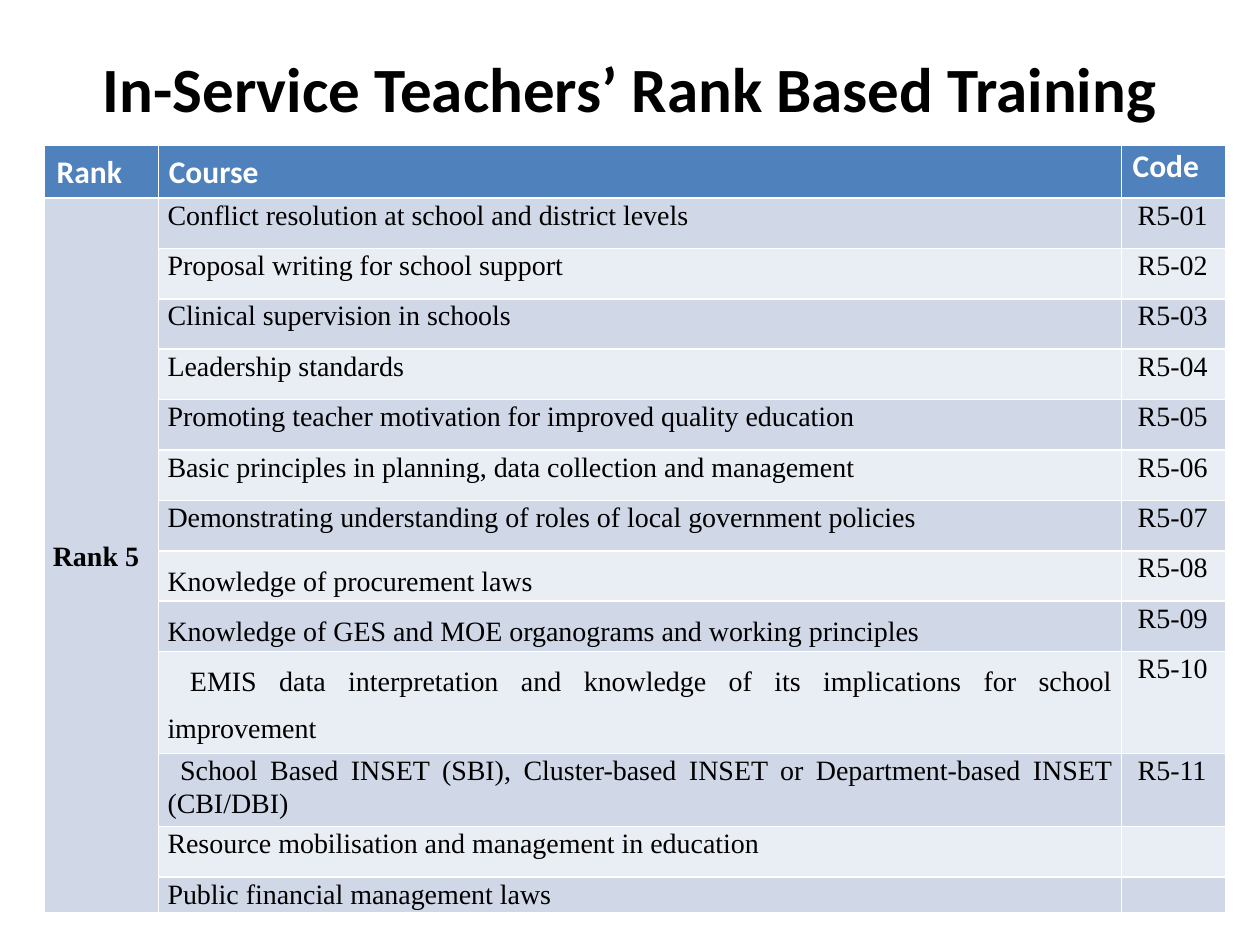
from pptx import Presentation
from pptx import util as u
from pptx.dml.color import RGBColor
from pptx.enum import text

BLACK = RGBColor(0x00, 0x00, 0x00)
WHITE = RGBColor(0xFF, 0xFF, 0xFF)
HEADER_BLUE = RGBColor(0x4F, 0x81, 0xBD)
BANDS = (RGBColor(0xD0, 0xD8, 0xE8), RGBColor(0xE9, 0xED, 0xF4))
HEADING_FONT = "Calibri"
BODY_FONT = "Times New Roman"

TITLE = "In-Service Teachers’ Rank Based Training"
COLUMN_WIDTHS = (0.91, 7.64, 0.83)
HEADER_HEIGHT = 0.41
SINGLE, WIDE = 1.07, 1.49

# Course, row height, line spacing
COURSES = (
    ("Conflict resolution at school and district levels", 0.4, SINGLE),
    ("Proposal writing for school support", 0.4, SINGLE),
    ("Clinical supervision in schools", 0.4, SINGLE),
    ("Leadership standards", 0.4, SINGLE),
    ("Promoting teacher motivation for improved quality education", 0.4, SINGLE),
    ("Basic principles in planning, data collection and management", 0.4, SINGLE),
    ("Demonstrating understanding of roles of local government policies", 0.4, SINGLE),
    ("Knowledge of procurement laws", 0.4, WIDE),
    ("Knowledge of GES and MOE organograms and working principles", 0.4, WIDE),
    (" EMIS data interpretation and knowledge of its implications for school improvement",
     0.81, WIDE),
    (" School Based INSET (SBI), Cluster-based INSET or Department-based INSET (CBI/DBI)",
     0.58, SINGLE),
    ("Resource mobilisation and management in education", 0.4, SINGLE),
    ("Public financial management laws", 0.27, SINGLE),
)
CODED_COURSES = 11


def style_font(paragraph, name, size, color, bold):
    font = paragraph.font
    font.name, font.size, font.bold = name, u.Pt(size), bold
    font.color.rgb = color


def add_title(slide):
    box = slide.shapes.add_textbox(u.Inches(0.5), u.Inches(0.13), u.Inches(9), u.Inches(1.02))
    frame = box.text_frame
    frame.word_wrap = True
    frame.vertical_anchor = text.MSO_ANCHOR.MIDDLE
    frame.margin_top, frame.margin_bottom = u.Inches(0.1), 0
    heading = frame.paragraphs[0]
    heading.text = TITLE
    heading.alignment = text.PP_ALIGN.CENTER
    style_font(heading, HEADING_FONT, 36, BLACK, True)


def fill_cell(cell, fill, wording, left=0.07, top=0, spacing=SINGLE, after=0,
              align=text.PP_ALIGN.JUSTIFY, anchor=text.MSO_ANCHOR.TOP):
    """Write a cell and return its paragraph."""
    cell.fill.solid()
    cell.fill.fore_color.rgb = fill
    cell.margin_left, cell.margin_right = u.Inches(left), u.Inches(0.07)
    cell.margin_top = cell.margin_bottom = u.Inches(top)
    cell.vertical_anchor = anchor
    paragraph = cell.text_frame.paragraphs[0]
    paragraph.text = wording
    paragraph.alignment = align
    paragraph.line_spacing = spacing
    paragraph.space_after = u.Pt(after)
    return paragraph


def add_header(table):
    middle, top = text.MSO_ANCHOR.MIDDLE, text.MSO_ANCHOR.TOP
    headings = (("Rank", 0.1, 0.05, top), ("Course", 0.08, 0, middle), ("Code", 0.09, 0, top))
    for column, (wording, left, inset, anchor) in enumerate(headings):
        heading = fill_cell(table.cell(0, column), HEADER_BLUE, wording,
                            left=left, top=inset, anchor=anchor)
        style_font(heading, HEADING_FONT, 18, WHITE, True)


def add_course(table, row, course, spacing):
    band = BANDS[(row - 1) % 2]
    after = 8 if spacing == SINGLE else 0
    name = fill_cell(table.cell(row, 1), band, course, spacing=spacing, after=after)
    style_font(name, BODY_FONT, 16, BLACK, False)
    number = f"R5-{row:02d}" if row <= CODED_COURSES else ""
    code = fill_cell(table.cell(row, 2), band, number, left=0.13)
    style_font(code, BODY_FONT, 16, BLACK, False)
    if not number:
        # An empty cell takes its line height from the paragraph end mark
        code._p.get_or_add_endParaRPr().set("sz", "1600")


def add_course_table(slide):
    heights = [HEADER_HEIGHT] + [height for _, height, _ in COURSES]
    table = slide.shapes.add_table(
        len(heights), len(COLUMN_WIDTHS), u.Inches(0.35), u.Inches(1.15),
        u.Inches(sum(COLUMN_WIDTHS)), u.Inches(sum(heights))).table
    for column, width in zip(table.columns, COLUMN_WIDTHS):
        column.width = u.Inches(width)
    for row, height in zip(table.rows, heights):
        row.height = u.Inches(height)

    add_header(table)
    for row, (course, _, spacing) in enumerate(COURSES, start=1):
        add_course(table, row, course, spacing)

    rank_cell = table.cell(1, 0)
    rank_cell.merge(table.cell(len(COURSES), 0))
    rank = fill_cell(rank_cell, BANDS[0], "Rank 5",
                     align=text.PP_ALIGN.LEFT, anchor=text.MSO_ANCHOR.MIDDLE)
    style_font(rank, BODY_FONT, 16, BLACK, True)


def main():
    deck = Presentation()
    deck.slide_width, deck.slide_height = u.Inches(10), u.Inches(7.5)
    slide = deck.slides.add_slide(deck.slide_layouts[6])
    add_title(slide)
    add_course_table(slide)
    deck.save("out.pptx")


if __name__ == "__main__":
    main()
